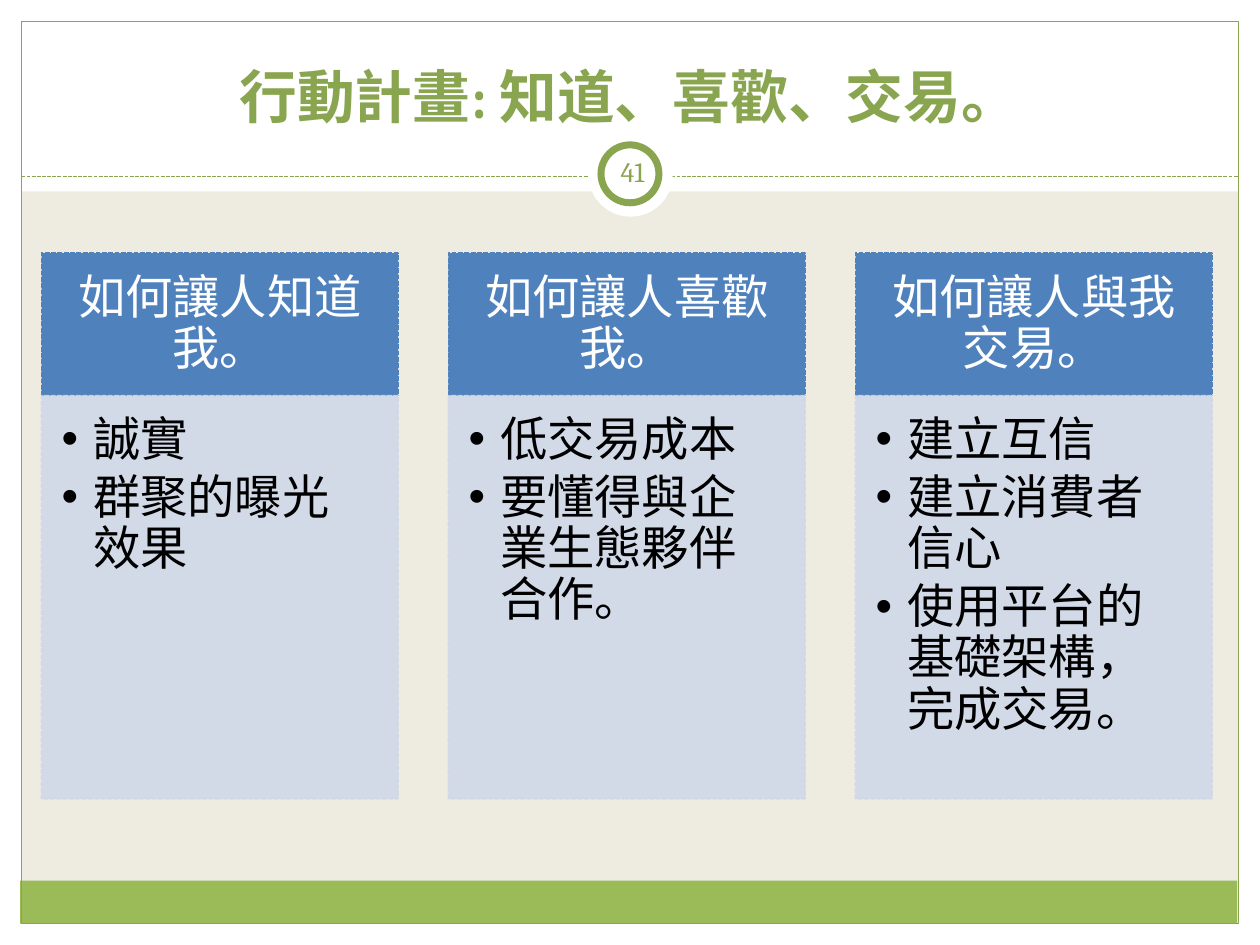
from typing import NamedTuple

from lxml.etree import SubElement
from pptx import Presentation
from pptx.dml.color import RGBColor
from pptx.enum.dml import MSO_LINE
from pptx.enum.shapes import MSO_CONNECTOR, MSO_SHAPE
from pptx.enum.text import MSO_ANCHOR, MSO_AUTO_SIZE, PP_ALIGN
from pptx.oxml.ns import qn
from pptx.util import Inches, Pt

WHITE = RGBColor(0xFF, 0xFF, 0xFF)
BLACK = RGBColor(0, 0, 0)
CREAM = RGBColor(0xEE, 0xEC, 0xE1)
GREEN = RGBColor(0x9B, 0xBB, 0x59)
OLIVE = RGBColor(0x89, 0xA5, 0x4F)
BLUE = RGBColor(0x4F, 0x81, 0xBD)
PALE = RGBColor(0xD0, 0xD8, 0xE8)
FONT = "Cambria"


class Box(NamedTuple):
    left: float
    top: float
    width: float
    height: float

    def emu(self) -> list:
        return [Inches(v) for v in self]


class Card(NamedTuple):
    head: str
    items: list[str]


CARDS = [
    Card("如何讓人知道我。", ["誠實", "群聚的曝光效果"]),
    Card("如何讓人喜歡我。", ["低交易成本", "要懂得與企業生態夥伴合作。"]),
    Card("如何讓人與我交易。",
         ["建立互信", "建立消費者信心", "使用平台的基礎架構，完成交易。"]),
]
LEFT, STEP, WIDTH = 0.33, 3.23, 2.83
TOP, HEAD, BODY = 2.01, 1.13, 3.2


def fade(fill, percent: int) -> None:
    """Set the opacity of a solid fill element."""
    SubElement(fill[0], qn("a:alpha"), val=str(percent * 1000))


def add_shape(slide, box: Box, fill=None, line=None, weight=0.75,
              kind=MSO_SHAPE.RECTANGLE, dash=None, alpha=100):
    shape = slide.shapes.add_shape(kind, *box.emu())
    shape.shadow.inherit = False
    if fill is None:
        shape.fill.background()
    else:
        shape.fill.solid()
        shape.fill.fore_color.rgb = fill
    if line is None:
        shape.line.fill.background()
    else:
        shape.line.color.rgb = line
        shape.line.width = Pt(weight)
        if dash:
            shape.line.dash_style = dash
    if alpha < 100:
        for fill_xml in list(shape._element.spPr.iter(qn("a:solidFill"))):
            fade(fill_xml, alpha)
    return shape


def add_bullet(para) -> None:
    props = para._p.get_or_add_pPr()
    props.set("marL", str(Inches(0.25)))
    props.set("indent", str(-Inches(0.25)))
    SubElement(props, qn("a:buFont"), typeface="Arial")
    SubElement(props, qn("a:buChar"), char="•")


def set_text(shape, *lines: str, size=27, color=BLACK, bold=False,
             align=PP_ALIGN.CENTER, anchor=MSO_ANCHOR.MIDDLE,
             inset=(0.1, 0.05, 0.1, 0.05), space=1.0, after=0,
             bullet=False) -> None:
    frame = shape.text_frame
    frame.word_wrap = True
    frame.auto_size = MSO_AUTO_SIZE.NONE
    frame.vertical_anchor = anchor
    (frame.margin_left, frame.margin_top,
     frame.margin_right, frame.margin_bottom) = map(Inches, inset)
    for i, line in enumerate(lines):
        para = frame.paragraphs[0] if i == 0 else frame.add_paragraph()
        para.alignment = align
        para.line_spacing = space
        para.space_before = Pt(0)
        para.space_after = Pt(after)
        if bullet:
            add_bullet(para)
        run = para.add_run()
        run.text = line
        font = run.font
        font.name, font.size, font.bold = FONT, Pt(size), bold
        font.color.rgb = color


def add_frame(slide) -> None:
    # White margins and header band
    for box in (Box(0, 7.33, 10, 0.17), Box(0, 0, 10, 1.52),
                Box(0, 0, 0.17, 7.5), Box(9.83, 0, 0.17, 7.5)):
        add_shape(slide, box, WHITE)
    # Green footer and outline
    add_shape(slide, Box(0.16, 6.99, 9.66, 0.34), GREEN)
    add_shape(slide, Box(0.17, 0.17, 9.66, 7.16), line=OLIVE)
    # Dashed rule under the title
    rule = slide.shapes.add_connector(
        MSO_CONNECTOR.STRAIGHT,
        Inches(0.17), Inches(1.4), Inches(9.83), Inches(1.4))
    rule.line.color.rgb = OLIVE
    rule.line.width = Pt(0.75)
    rule.line.dash_style = MSO_LINE.SQUARE_DOT
    SubElement(rule._element.spPr, qn("a:effectLst"))
    # Number badge
    add_shape(slide, Box(4.67, 1.05, 0.67, 0.67), WHITE, kind=MSO_SHAPE.OVAL)
    add_shape(slide, Box(4.77, 1.15, 0.46, 0.46), WHITE, OLIVE, 4,
              MSO_SHAPE.OVAL)


def add_title(slide) -> None:
    title = slide.shapes.title
    title.left, title.top, title.width, title.height = Box(
        0.33, 0.25, 9.33, 0.83).emu()
    set_text(title, "行動計畫: 知道、喜歡、交易。", size=33, color=OLIVE,
             bold=True, anchor=MSO_ANCHOR.BOTTOM)
    slide.shapes._spTree.append(title._element)  # bring to front


def add_card(slide, card: Card, left: float) -> None:
    head = add_shape(slide, Box(left, TOP, WIDTH, HEAD), BLUE, BLUE, 0.9,
                     dash=MSO_LINE.SQUARE_DOT)
    set_text(head, card.head, color=WHITE, space=0.9,
             inset=(0.21, 0.12, 0.21, 0.12))
    body = add_shape(slide, Box(left, TOP + HEAD, WIDTH, BODY), PALE, PALE,
                     0.9, dash=MSO_LINE.SQUARE_DOT, alpha=90)
    set_text(body, *card.items, align=PP_ALIGN.LEFT, anchor=MSO_ANCHOR.TOP,
             space=0.9, after=4, bullet=True, inset=(0.16, 0.16, 0.21, 0.24))


def main() -> None:
    deck = Presentation()
    deck.slide_width, deck.slide_height = Inches(10), Inches(7.5)
    slide = deck.slides.add_slide(deck.slide_layouts[5])
    slide.background.fill.solid()
    slide.background.fill.fore_color.rgb = CREAM

    add_frame(slide)
    add_title(slide)
    # Slide number
    badge = slide.shapes.add_textbox(*Box(4.77, 1.12, 0.5, 0.48).emu())
    set_text(badge, "41", size=16, color=OLIVE, inset=(0.05,) * 4)
    # Three columns
    for i, card in enumerate(CARDS):
        add_card(slide, card, LEFT + i * STEP)

    deck.save("out.pptx")


if __name__ == "__main__":
    main()
